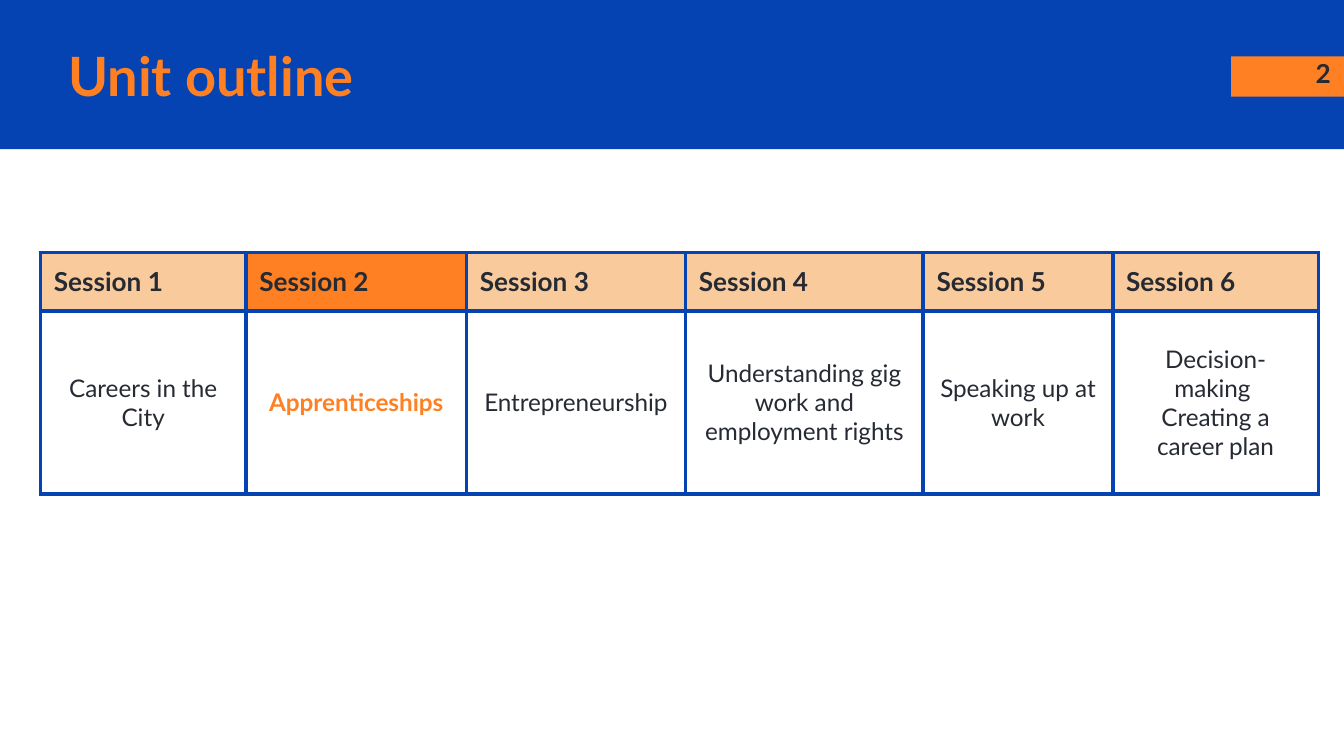
from lxml import etree
from pptx import Presentation
from pptx.dml.color import RGBColor
from pptx.enum.shapes import MSO_SHAPE
from pptx.enum.text import MSO_ANCHOR, PP_ALIGN
from pptx.oxml.ns import qn
from pptx.util import Inches, Pt

RECT = MSO_SHAPE.RECTANGLE
LEFT, CENTER, RIGHT = PP_ALIGN.LEFT, PP_ALIGN.CENTER, PP_ALIGN.RIGHT
TOP, MIDDLE = MSO_ANCHOR.TOP, MSO_ANCHOR.MIDDLE
COLORS = {"blue": "0543B3", "orange": "FF8022", "peach": "F9CB9C",
          "ink": "262A33", "white": "FFFFFF"}
WIDTHS = [1.53, 1.64, 1.63, 1.77, 1.41, 1.53]
HEIGHTS = [0.37, 1.36]
TOPICS = ["Careers in the City", "Apprenticeships", "Entrepreneurship",
          "Understanding gig work and employment rights",
          "Speaking up at work", "Decision- making \nCreating a career plan"]
CURRENT = 1


def rgb(name):
    """Return the named colour."""
    return RGBColor.from_string(COLORS[name])


def write(frame, text, size, color="ink", bold=True, align=LEFT):
    """Fill a text frame and format its runs."""
    frame.text = text
    for para in frame.paragraphs:
        para.alignment = align
        for run in para.runs:
            font = run.font
            font.name, font.size, font.bold = "Lato", Pt(size), bold
            font.color.rgb = rgb(color)


def inset(box):
    """Give a text frame or cell equal margins."""
    box.margin_left = box.margin_right = Inches(0.1)
    box.margin_top = box.margin_bottom = Inches(0.1)


def add_bar(slide, x, y, w, h, color):
    """Add a plain filled rectangle."""
    bar = slide.shapes.add_shape(RECT, Inches(x), Inches(y), Inches(w), Inches(h))
    bar.shadow.inherit = False
    bar.fill.solid()
    bar.fill.fore_color.rgb = rgb(color)
    bar.line.fill.background()


def add_label(slide, x, y, w, h, text, size, color, align, anchor):
    """Add a bold one-line text box."""
    box = slide.shapes.add_textbox(Inches(x), Inches(y), Inches(w), Inches(h))
    frame = box.text_frame
    frame.word_wrap = True
    frame.vertical_anchor = anchor
    inset(frame)
    write(frame, text, size, color, align=align)


def add_header(slide, x, y, w, h):
    """Add the title band with its page tag."""
    add_bar(slide, x, y, w, h, "blue")
    add_bar(slide, x + w - 0.84, y + 0.42, 0.84, 0.3, "orange")
    add_label(slide, x + w - 0.6, y + 0.33, 0.6, 0.43, "2", 14, "ink", RIGHT, TOP)
    add_label(slide, x + 0.41, y + 0.28, 8.46, 0.56, "Unit outline", 29,
              "orange", LEFT, MIDDLE)


def set_border(cell):
    """Draw a blue line on every side of a cell."""
    props = cell._tc.get_or_add_tcPr()
    for spot, side in enumerate(("a:lnL", "a:lnR", "a:lnT", "a:lnB")):
        line = etree.Element(qn(side), w=str(Pt(2.25)))
        fill = etree.SubElement(line, qn("a:solidFill"))
        etree.SubElement(fill, qn("a:srgbClr"), val=COLORS["blue"])
        props.insert(spot, line)


def style_cell(cell, fill, anchor):
    """Set the fill, margins, anchor and border of a cell."""
    cell.fill.solid()
    cell.fill.fore_color.rgb = rgb(fill)
    cell.vertical_anchor = anchor
    inset(cell)
    set_border(cell)


def add_outline(slide, x, y, w, h):
    """Add the table of sessions and topics."""
    frame = slide.shapes.add_table(len(HEIGHTS), len(WIDTHS), Inches(x), Inches(y),
                                   Inches(w), Inches(h))
    table = frame.table
    for row, height in zip(table.rows, HEIGHTS):
        row.height = Inches(height)
    for col, (width, topic) in enumerate(zip(WIDTHS, TOPICS)):
        now = col == CURRENT
        table.columns[col].width = Inches(width)
        head, body = table.cell(0, col), table.cell(1, col)
        write(head.text_frame, f"Session {col + 1}", 14)
        style_cell(head, "orange" if now else "peach", TOP)
        write(body.text_frame, topic, 13, "orange" if now else "ink", now, CENTER)
        style_cell(body, "white", MIDDLE)


def main():
    """Build and save the slide."""
    deck = Presentation()
    deck.slide_width = Inches(10)
    deck.slide_height = deck.slide_width * 9 // 16
    slide = deck.slides.add_slide(deck.slide_layouts[6])
    add_header(slide, 0, 0, 10, 1.11)
    add_outline(slide, 0.3, 1.88, sum(WIDTHS), sum(HEIGHTS))
    deck.save("out.pptx")


if __name__ == "__main__":
    main()
